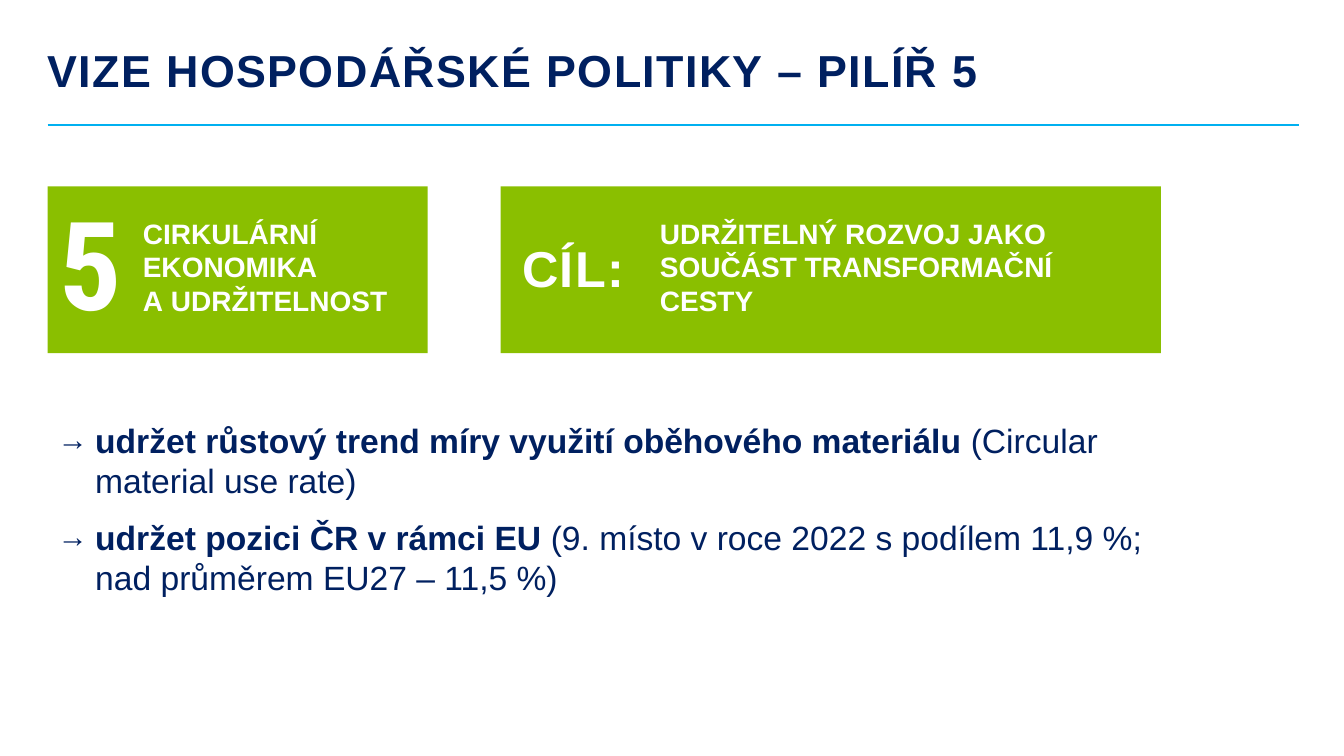
"""Build the slide on pillar 5 of the economic policy vision."""
import pptx
import pptx.dml.color
import pptx.enum.shapes
import pptx.enum.text
import pptx.util
from lxml import etree
from pptx.util import Cm

NAVY, GREEN, SKY, WHITE = "002060", "8ABF00", "00B0F0", "FFFFFF"
TITLE = "VIZE HOSPODÁŘSKÉ POLITIKY – PILÍŘ 5"
CARDS = [
    dict(left=1.2, width=9.58, tag="5", font="Roboto Condensed", size=88,
         start=1.5, span=1.85, wide=6.99,
         lines=["CIRKULÁRNÍ EKONOMIKA A\u00a0UDRŽITELNOST"]),
    dict(left=12.62, width=16.64, tag="CÍL:", font="Arial", size=36,
         start=13.16, span=3.22, wide=12.14,
         lines=["UDRŽITELNÝ ROZVOJ JAKO", "SOUČÁST TRANSFORMAČNÍ CESTY"]),
]
POINTS = [
    ("udržet růstový trend míry využití oběhového materiálu ",
     "(Circular material use rate)"),
    ("udržet pozici ČR v rámci EU ",
     "(9. místo v roce 2022 s podílem 11,9 %; nad průměrem EU27 – 11,5 %)"),
]
LEFT = 1.2
ANCHOR = pptx.enum.text.MSO_ANCHOR
ALIGN = pptx.enum.text.PP_ALIGN


def color(text):
    return pptx.dml.color.RGBColor.from_string(text)


def place(shape, left, top, width, height):
    shape.left, shape.top = Cm(left), Cm(top)
    shape.width, shape.height = Cm(width), Cm(height)


def frame(shape, anchor, inset=0.25):
    box = shape.text_frame
    box.word_wrap = True
    box.auto_size = pptx.enum.text.MSO_AUTO_SIZE.NONE
    box.vertical_anchor = anchor
    box.margin_left, box.margin_right = Cm(inset), Cm(0.25)
    box.margin_top = box.margin_bottom = Cm(0.13)
    return box


def write(para, text, size, tint, bold=True, font="Arial", track=0):
    run = para.add_run()
    run.text = text
    run.font.name, run.font.size = font, pptx.util.Pt(size)
    run.font.bold, run.font.color.rgb = bold, color(tint)
    if track:
        run._r.get_or_add_rPr().set("spc", str(track))


def head(shape, text, size, tint, font="Arial"):
    para = frame(shape, ANCHOR.MIDDLE, 0).paragraphs[0]
    para.alignment, para.line_spacing = ALIGN.LEFT, 0.9
    write(para, text, size, tint, font=font, track=100)


def block(slide, left, top, width, height):
    shape = slide.shapes.add_shape(
        pptx.enum.shapes.MSO_SHAPE.RECTANGLE,
        Cm(left), Cm(top), Cm(width), Cm(height))
    shape.shadow.inherit = False
    shape.fill.solid()
    shape.fill.fore_color.rgb = color(GREEN)
    shape.line.fill.background()
    return shape


def card(slide, item):
    block(slide, item["left"], 4.7, item["width"], 4.2)
    tag = block(slide, item["start"], 5.18, item["span"], 3.3)
    head(tag, item["tag"], item["size"], WHITE, item["font"])
    label = block(slide, item["start"] + item["span"], 5.31, item["wide"], 2.82)
    para = frame(label, ANCHOR.MIDDLE).paragraphs[0]
    para.alignment = ALIGN.LEFT
    for i, line in enumerate(item["lines"]):
        if i:
            para.add_line_break()
        write(para, line, 20, WHITE)


def bullet(para):
    props = para._p.get_or_add_pPr()
    props.set("marL", str(Cm(0.95)))
    props.set("indent", str(-Cm(0.95)))
    space = pptx.oxml.ns.qn
    tint = etree.SubElement(props, space("a:buClr"))
    etree.SubElement(tint, space("a:srgbClr"), val=NAVY)
    etree.SubElement(props, space("a:buSzPct"), val="90000")
    etree.SubElement(props, space("a:buFont"), typeface="Arial")
    etree.SubElement(props, space("a:buChar"), char="→")


def main():
    deck = pptx.Presentation()
    deck.slide_width, deck.slide_height = Cm(33.87), Cm(19.05)
    slide = deck.slides.add_slide(deck.slide_layouts[1])
    title, body = slide.placeholders
    place(title, LEFT, 1.22, 25.63, 1.22)
    head(title, TITLE, 32, NAVY)

    rule = slide.shapes.add_connector(
        pptx.enum.shapes.MSO_CONNECTOR.STRAIGHT,
        Cm(LEFT), Cm(3.15), Cm(32.74), Cm(3.15))
    rule.line.color.rgb, rule.line.width = color(SKY), pptx.util.Pt(1)
    etree.SubElement(rule._element.spPr, pptx.oxml.ns.qn("a:effectLst"))

    for item in CARDS:
        card(slide, item)

    place(body, LEFT, 10.44, 28.07, 5.99)
    box = frame(body, ANCHOR.TOP)
    for i, (strong, plain) in enumerate(POINTS):
        para = box.add_paragraph() if i else box.paragraphs[0]
        bullet(para)
        para.space_before, para.space_after = pptx.util.Pt(0), pptx.util.Pt(12)
        write(para, strong, 24, NAVY)
        write(para, plain, 24, NAVY, bold=False)
    deck.save("out.pptx")


if __name__ == "__main__":
    main()
